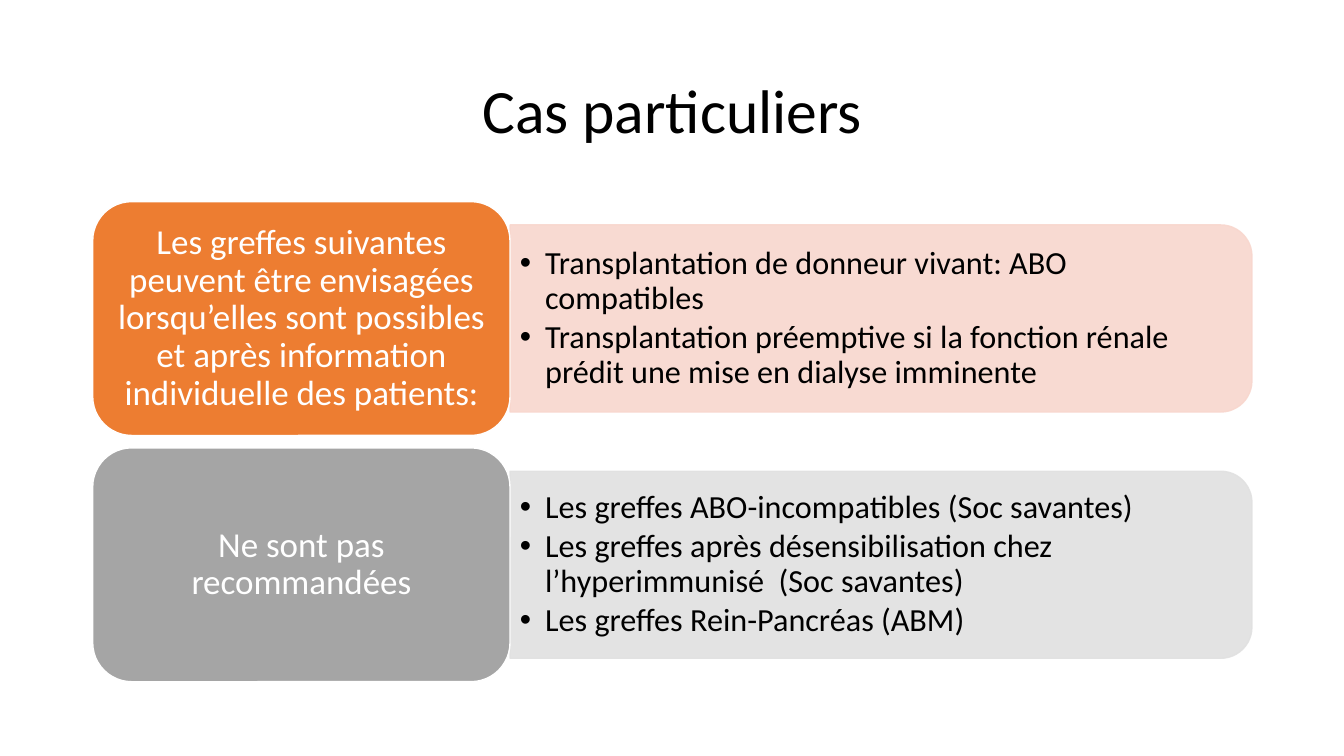
from dataclasses import dataclass

import lxml.etree
import pptx
import pptx.dml.color
import pptx.enum.shapes
import pptx.enum.text
import pptx.oxml.ns
import pptx.util

Pt = pptx.util.Pt
RGBColor = pptx.dml.color.RGBColor
ShapeKind = pptx.enum.shapes.MSO_SHAPE
Align = pptx.enum.text.PP_ALIGN
qn = pptx.oxml.ns.qn

BLACK = RGBColor(0x00, 0x00, 0x00)
WHITE = RGBColor(0xFF, 0xFF, 0xFF)
ORANGE = RGBColor(0xED, 0x7D, 0x31)
PALE_ORANGE = RGBColor(0xF8, 0xD7, 0xCE)
GRAY = RGBColor(0xA5, 0xA5, 0xA5)
PALE_GRAY = RGBColor(0xE1, 0xE1, 0xE1)

LEFT = 66.24
FIRST_TOP = 144
ROW_PITCH = 175.9
CARD_WIDTH, CARD_HEIGHT = 298.08, 167.04
CARD_INSET = 8.15
PANEL_WIDTH, PANEL_HEIGHT = 529.92, 133.63
PANEL_TEXT_WIDTH, PANEL_TEXT_HEIGHT = 523.44, 120.96
BULLET_INDENT = 18


@dataclass(frozen=True)
class Box:
    left: float
    top: float
    width: float
    height: float

    def lengths(self) -> list[pptx.util.Length]:
        return [Pt(value) for value in (self.left, self.top, self.width, self.height)]


@dataclass(frozen=True)
class TextStyle:
    size: float
    color: RGBColor
    align: Align
    space_after: float = 0
    bulleted: bool = False


@dataclass(frozen=True)
class Case:
    heading: str
    points: tuple[str, ...]
    card_color: RGBColor
    panel_color: RGBColor


TITLE_STYLE = TextStyle(44, BLACK, Align.CENTER)
HEADING_STYLE = TextStyle(25, WHITE, Align.CENTER)
POINT_STYLE = TextStyle(23, BLACK, Align.LEFT, space_after=3, bulleted=True)

CASES = (
    Case(
        "Les greffes suivantes peuvent être envisagées lorsqu’elles sont possibles "
        "et après information individuelle des patients:",
        (
            "Transplantation de donneur vivant: ABO compatibles",
            "Transplantation préemptive si la fonction rénale prédit une mise en dialyse imminente",
        ),
        ORANGE,
        PALE_ORANGE,
    ),
    Case(
        "Ne sont pas recommandées",
        (
            "Les greffes ABO-incompatibles (Soc savantes)",
            "Les greffes après désensibilisation chez l’hyperimmunisé  (Soc savantes)",
            "Les greffes Rein-Pancréas (ABM)",
        ),
        GRAY,
        PALE_GRAY,
    ),
)


def set_formats(target: object, formats: dict[str, object]) -> None:
    for name, value in formats.items():
        setattr(target, name, value)


def add_bullet(para) -> None:
    properties = para._p.get_or_add_pPr()
    properties.set("marL", str(Pt(BULLET_INDENT)))
    properties.set("indent", str(-Pt(BULLET_INDENT)))
    lxml.etree.SubElement(properties, qn("a:buFont"), typeface="Arial")
    lxml.etree.SubElement(properties, qn("a:buChar"), char="•")


def add_text(page, box: Box, lines: tuple[str, ...], style: TextStyle) -> None:
    frame = page.shapes.add_textbox(*box.lengths()).text_frame
    set_formats(frame, {
        "word_wrap": True,
        "vertical_anchor": pptx.enum.text.MSO_ANCHOR.MIDDLE,
        "text": "\n".join(lines),
    })
    for para in frame.paragraphs:
        set_formats(para, {
            "alignment": style.align,
            "line_spacing": 0.9,
            "space_after": Pt(style.space_after),
        })
        for span in para.runs:
            set_formats(span.font, {"name": "Calibri", "size": Pt(style.size)})
            span.font.color.rgb = style.color
        if style.bulleted:
            add_bullet(para)


def add_block(page, kind: ShapeKind, box: Box, fill: RGBColor, line: RGBColor):
    block = page.shapes.add_shape(kind, *box.lengths())
    block.shadow.inherit = False
    block.fill.solid()
    block.fill.fore_color.rgb = fill
    block.line.color.rgb = line
    block.line.width = Pt(1)
    return block


def add_panel(page, left: float, middle: float, color: RGBColor) -> None:
    """Draw a translucent panel, turned so that its round corners face right."""
    center = left + PANEL_WIDTH / 2
    upright = Box(center - PANEL_HEIGHT / 2, middle - PANEL_WIDTH / 2, PANEL_HEIGHT, PANEL_WIDTH)
    panel = add_block(page, ShapeKind.ROUND_2_SAME_RECTANGLE, upright, color, color)
    panel.rotation = 90
    for tint in panel.element.spPr.iter(qn("a:srgbClr")):
        lxml.etree.SubElement(tint, qn("a:alpha"), val="90000")


def add_case(page, case: Case, top: float) -> None:
    middle = top + CARD_HEIGHT / 2
    panel_left = LEFT + CARD_WIDTH
    add_panel(page, panel_left, middle, case.panel_color)
    points_box = Box(panel_left, middle - PANEL_TEXT_HEIGHT / 2, PANEL_TEXT_WIDTH, PANEL_TEXT_HEIGHT)
    add_text(page, points_box, case.points, POINT_STYLE)
    card = Box(LEFT, top, CARD_WIDTH, CARD_HEIGHT)
    add_block(page, ShapeKind.ROUNDED_RECTANGLE, card, case.card_color, WHITE)
    heading_box = Box(
        LEFT + CARD_INSET,
        top + CARD_INSET,
        CARD_WIDTH - 2 * CARD_INSET,
        CARD_HEIGHT - 2 * CARD_INSET,
    )
    add_text(page, heading_box, (case.heading,), HEADING_STYLE)


def main() -> None:
    deck = pptx.Presentation()
    set_formats(deck, {"slide_width": Pt(960), "slide_height": Pt(540)})
    page = deck.slides.add_slide(deck.slide_layouts[6])
    add_text(page, Box(LEFT, 28.8, 828, 104.4), ("Cas particuliers",), TITLE_STYLE)
    for row, case in enumerate(CASES):
        add_case(page, case, FIRST_TOP + row * ROW_PITCH)
    deck.save("out.pptx")


if __name__ == "__main__":
    main()
